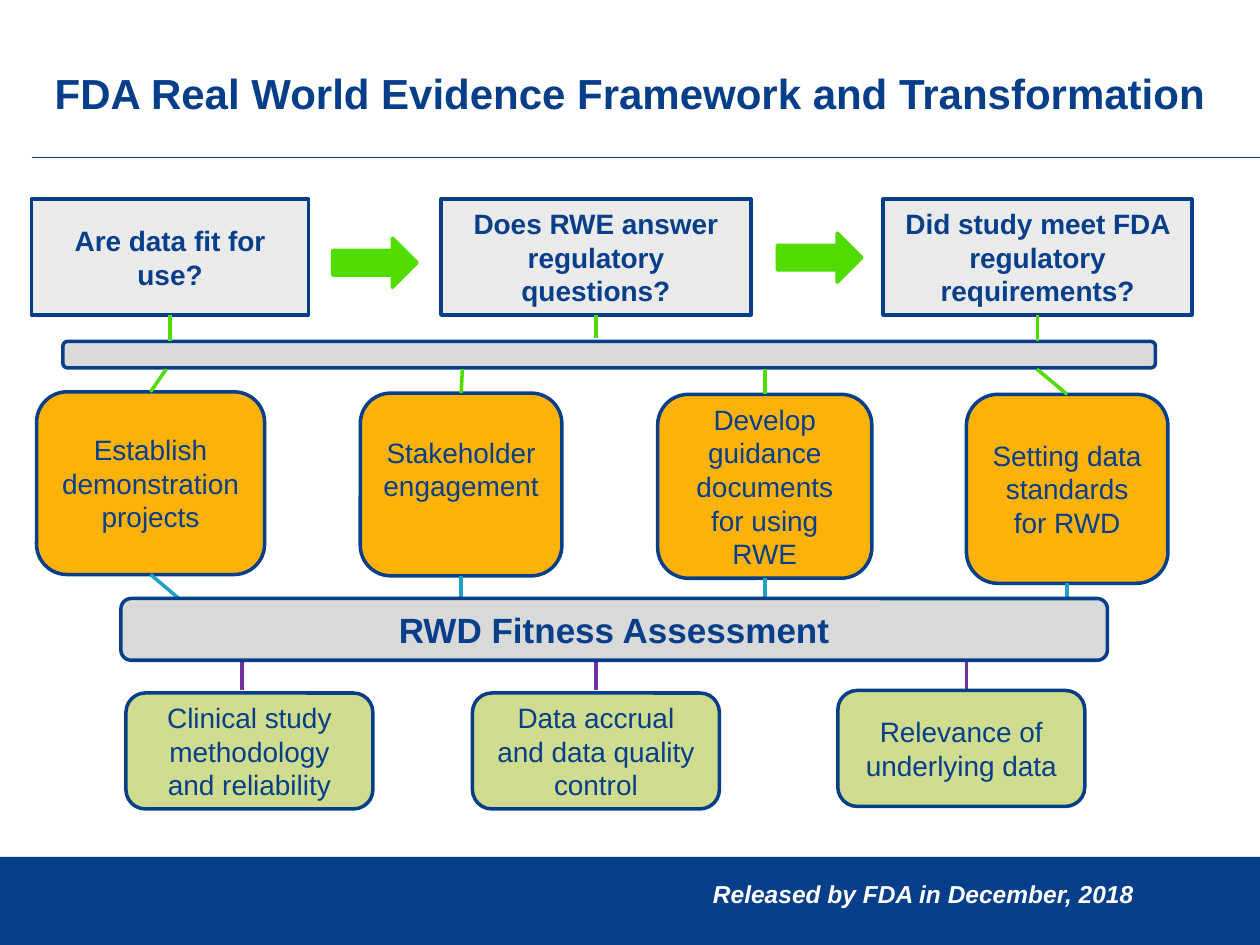
from lxml.etree import SubElement
from pptx import Presentation
from pptx.dml.color import RGBColor
from pptx.enum.shapes import MSO_CONNECTOR, MSO_SHAPE
from pptx.enum.text import MSO_ANCHOR, PP_ALIGN
from pptx.oxml.ns import qn
from pptx.util import Inches, Pt

NAVY, GREEN, PURPLE, TEAL = "063E89", "51DC00", "7030A0", "1EA1C7"
PALE_GRAY, GRAY, ORANGE, OLIVE = "EAEAEA", "D9D9D9", "FDB209", "CFDC8D"
WHITE, FOOTER_BLUE = "FFFFFF", "063F89"
TOP, BOTTOM = 0, 2

QUESTIONS = [
    (0.25, 2.2, "Are data fit for use?"),
    (3.5, 2.46, "Does RWE answer regulatory questions?"),
    (7.01, 2.45, "Did study meet FDA regulatory requirements?"),
]
# box position, text, link start on the upper bar, link end on the fitness bar
ACTIONS = [
    ((0.29, 3.11, 1.81, 1.45), "Establish demonstration projects", 1.32, 1.42),
    ((2.86, 3.12, 1.6, 1.45), "Stakeholder engagement", 3.67, 3.66),
    ((5.22, 3.13, 1.7, 1.46), "Develop guidance documents for using RWE", 6.07, 6.07),
    ((7.67, 3.13, 1.6, 1.5), "Setting data standards for RWD", 8.23, 8.47),
]
# left, top, text, link position
CRITERIA = [
    (1, 5.5, "Clinical study methodology and reliability", 1.92),
    (3.75, 5.5, "Data accrual and data quality control", 4.73),
    (6.65, 5.48, "Relevance of underlying data", 7.67),
]


def rgb(color):
    return RGBColor.from_string(color)


def apply(target, values):
    for name, value in values.items():
        setattr(target, name, value)


def write(shape, text, size, color=NAVY, align=PP_ALIGN.CENTER, frame=None, **font):
    text_frame = shape.text_frame
    apply(text_frame, {"word_wrap": True, "vertical_anchor": MSO_ANCHOR.MIDDLE, **(frame or {})})
    paragraph = text_frame.paragraphs[0]
    paragraph.alignment = align
    run = paragraph.add_run()
    run.text = text
    apply(run.font, {"name": "Arial", "size": Pt(size), **font})
    run.font.color.rgb = rgb(color)


def add_block(slide, kind, position, fill, line=NAVY):
    block = slide.shapes.add_shape(kind, *map(Inches, position))
    block.shadow.inherit = False
    block.fill.solid()
    block.fill.fore_color.rgb = rgb(fill)
    if line:
        block.line.color.rgb = rgb(line)
        block.line.width = Pt(2)
    else:
        block.line.fill.background()
    return block


def add_link(slide, start, end, color, width=2):
    link = slide.shapes.add_connector(MSO_CONNECTOR.STRAIGHT, *map(Inches, (*start, *end)))
    link.line.color.rgb = rgb(color)
    link.line.width = Pt(width)
    SubElement(link._element.spPr, qn("a:effectLst"))
    return link


def add_text(slide, position, text, size, **style):
    box = slide.shapes.add_textbox(*map(Inches, position))
    write(box, text, size, **style)


def add_page_frame(slide):
    """Title with its rule, and the footer band with its note."""
    add_link(slide, (0.25, 1.25), (10, 1.25), NAVY, 0.75)
    add_block(slide, MSO_SHAPE.RECTANGLE, (0, 6.8, 10, 0.7), FOOTER_BLUE, None)
    title_frame = {"margin_left": 0, "margin_right": 0, "margin_top": 0,
                   "margin_bottom": Inches(0.37), "vertical_anchor": MSO_ANCHOR.BOTTOM}
    add_text(slide, (0.25, 0.48, 9.5, 0.83),
             "FDA Real World Evidence Framework and Transformation", 24,
             frame=title_frame, bold=True)
    add_text(slide, (5.56, 6.92, 3.56, 0.34), "Released by FDA in December, 2018", 14,
             color=WHITE, align=PP_ALIGN.LEFT, frame={"word_wrap": False},
             bold=True, italic=True)


def add_questions(slide):
    for (left, width, text), bar_top in zip(QUESTIONS, (2.71, 2.68, 2.71)):
        question = add_block(slide, MSO_SHAPE.RECTANGLE, (left, 1.58, width, 0.92), PALE_GRAY)
        write(question, text, 16, bold=True)
        center = left + width / 2
        link = add_link(slide, (center, 2.5), (center, bar_top), GREEN)
        link.begin_connect(question, BOTTOM)
    for left, top in ((2.64, 1.89), (6.17, 1.85)):
        add_block(slide, MSO_SHAPE.RIGHT_ARROW, (left, top, 0.67, 0.39), GREEN, GREEN)


def add_actions(slide):
    for position, text, bar_x, fitness_x in ACTIONS:
        left, top, width, height = position
        center = left + width / 2
        action = add_block(slide, MSO_SHAPE.ROUNDED_RECTANGLE, position, ORANGE)
        raised = {"margin_bottom": Inches(0.3)} if text.startswith("Stakeholder") else None
        write(action, text, 16, frame=raised)
        upper = add_link(slide, (bar_x, 2.93), (center, top), GREEN)
        upper.end_connect(action, TOP)
        lower = add_link(slide, (center, top + height), (fitness_x, 4.75), TEAL)
        lower.begin_connect(action, BOTTOM)


def add_criteria(slide):
    for left, top, text, link_x in CRITERIA:
        add_link(slide, (link_x, 5.24), (link_x, 5.48), PURPLE)
        criterion = add_block(slide, MSO_SHAPE.ROUNDED_RECTANGLE, (left, top, 1.96, 0.92), OLIVE)
        write(criterion, text, 16)


def main():
    deck = Presentation()
    apply(deck, {"slide_width": Inches(10), "slide_height": Inches(7.5)})
    slide = deck.slides.add_slide(deck.slide_layouts[6])

    add_page_frame(slide)
    add_block(slide, MSO_SHAPE.ROUNDED_RECTANGLE, (0.5, 2.71, 8.67, 0.21), GRAY)
    add_questions(slide)
    add_actions(slide)
    add_criteria(slide)
    fitness = add_block(slide, MSO_SHAPE.ROUNDED_RECTANGLE, (0.96, 4.75, 7.83, 0.49), GRAY)
    write(fitness, "RWD Fitness Assessment", 20, bold=True)

    deck.save("out.pptx")


if __name__ == "__main__":
    main()
